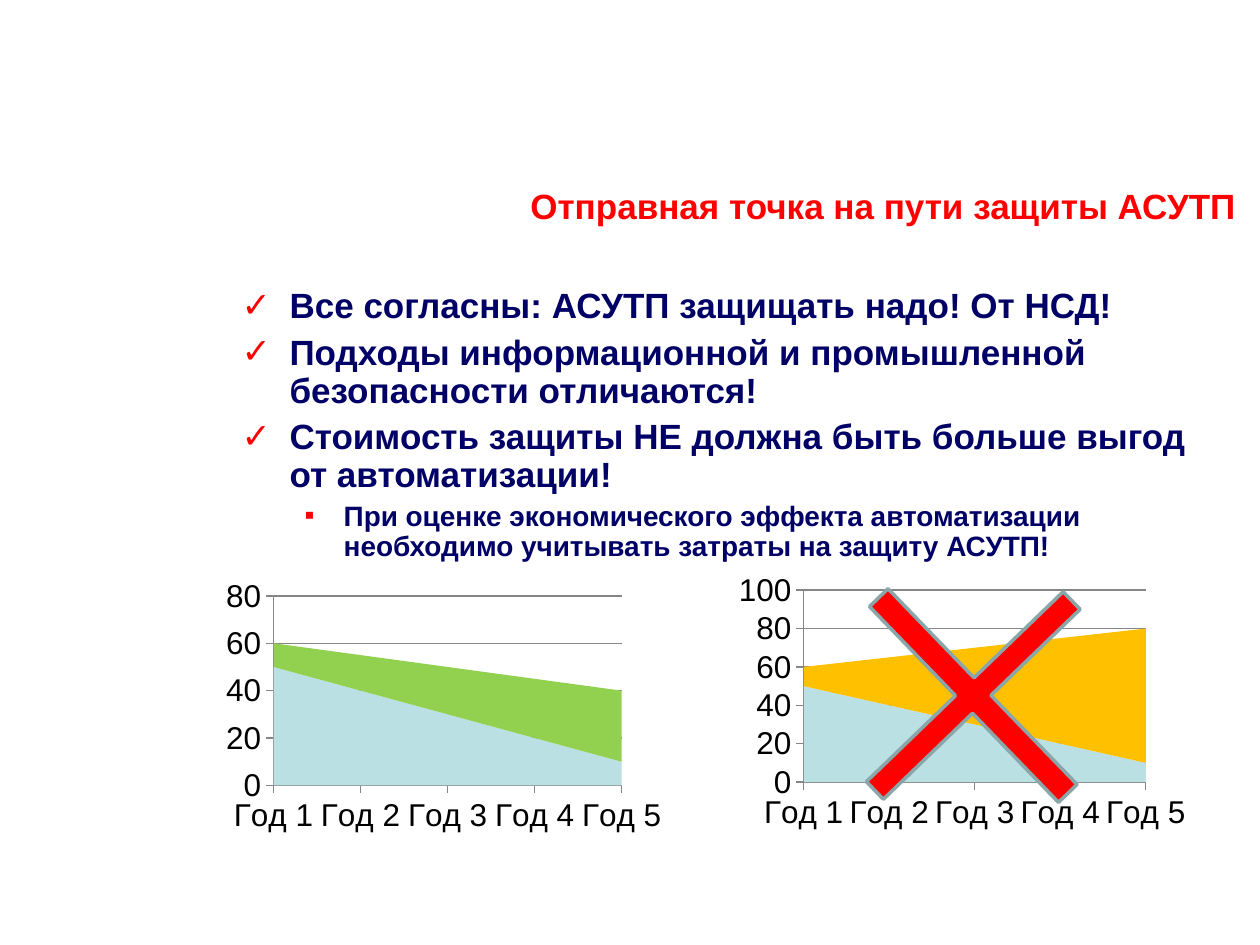
from lxml.etree import SubElement
from pptx import Presentation
from pptx.chart.data import CategoryChartData
from pptx.dml.color import RGBColor
from pptx.enum.chart import XL_CHART_TYPE, XL_TICK_MARK
from pptx.enum.shapes import MSO_SHAPE
from pptx.enum.text import MSO_ANCHOR, PP_ALIGN
from pptx.oxml.ns import qn
from pptx.util import Inches, Pt

RED, NAVY, BLACK, GRAY = "FF0000", "000066", "000000", "868686"
FONT = "Arial"

HEADING = "Отправная точка на пути защиты АСУТП"
MAIN = {"mark": "✓", "size": 20, "indent": 0.38, "hang": 0.38}
SUB = {"mark": "▪", "size": 16, "indent": 0.81, "hang": 0.31}
POINTS = [
    (MAIN, "Все согласны: АСУТП защищать надо! От НСД!"),
    (MAIN, "Подходы информационной и промышленной безопасности отличаются!"),
    (MAIN, "Стоимость защиты НЕ должна быть больше выгод от автоматизации!"),
    (SUB, "При оценке экономического эффекта автоматизации "
          "необходимо учитывать затраты на защиту АСУТП!"),
]
YEARS = [f"Год {number}" for number in range(1, 6)]
BENEFIT = ("Series 1", [50, 40, 30, 20, 10], "BBE0E3")
SCENARIOS = [
    {"box": (1.74, 4.56, 3.59, 2.12), "plot": (0.12, 0.08, 0.77, 0.71), "top": 80,
     "series": [BENEFIT, ("Series 2", [10, 15, 20, 25, 30], "92D050")]},
    {"box": (5.8, 4.49, 3.62, 2.42), "plot": (0.16, 0.08, 0.75, 0.63), "top": 100,
     "series": [BENEFIT, ("Series 2", [10, 25, 40, 55, 70], "FFC000")]},
]


def color(hex_code):
    return RGBColor.from_string(hex_code)


def inches(box):
    return [Inches(length) for length in box]


def apply(target, formats):
    for key, value in formats.items():
        setattr(target, key, value)


def style_font(font, size, hex_code, bold=False):
    apply(font, {"name": FONT, "size": Pt(size), "bold": bold})
    font.color.rgb = color(hex_code)


def add_heading(slide):
    heading = slide.shapes.title
    apply(heading, dict(zip(("left", "top", "width", "height"),
                            inches((1.25, 1.22, 8.66, 1.19)))))
    frame = heading.text_frame
    apply(frame, {"text": HEADING, "word_wrap": True, "margin_bottom": Inches(0.42),
                  "vertical_anchor": MSO_ANCHOR.MIDDLE})
    line = frame.paragraphs[0]
    line.alignment = PP_ALIGN.RIGHT
    style_font(line.runs[0].font, 20, RED, True)


def add_bullet(paragraph, level):
    props = paragraph._p.get_or_add_pPr()
    props.set("marL", str(Inches(level["indent"])))
    props.set("indent", str(-Inches(level["hang"])))
    tint = SubElement(props, qn("a:buClr"))
    SubElement(tint, qn("a:srgbClr"), val=RED)
    SubElement(props, qn("a:buFont"), typeface=FONT)
    SubElement(props, qn("a:buChar"), char=level["mark"])


def add_points(slide):
    frame = slide.shapes.add_textbox(*inches((1.82, 2.24, 7.96, 4.33))).text_frame
    frame.word_wrap = True
    for index, (level, text) in enumerate(POINTS):
        point = frame.add_paragraph() if index else frame.paragraphs[0]
        add_bullet(point, level)
        point.line_spacing = 0.9
        if index:
            point.space_before = Pt(level["size"] / 4)
        run = point.add_run()
        run.text = text
        style_font(run.font, level["size"], NAVY, True)


def place_plot(chart, fractions):
    plot_area = chart._chartSpace.chart.plotArea
    layout = plot_area.find(qn("c:layout"))
    if layout is None:
        layout = SubElement(plot_area, qn("c:layout"))
        plot_area.insert(0, layout)
    manual = SubElement(layout, qn("c:manualLayout"))
    settings = [("layoutTarget", "inner"), ("xMode", "edge"), ("yMode", "edge")]
    settings += zip("xywh", map(str, fractions))
    for tag, value in settings:
        SubElement(manual, qn(f"c:{tag}"), val=value)


def add_scenario(slide, scenario):
    data = CategoryChartData()
    data.categories = YEARS
    for name, values, _ in scenario["series"]:
        data.add_series(name, values)
    chart = slide.shapes.add_chart(XL_CHART_TYPE.AREA_STACKED,
                                   *inches(scenario["box"]), data).chart
    apply(chart, {"has_legend": False, "has_title": False})
    style_font(chart.font, 18, BLACK)
    place_plot(chart, scenario["plot"])
    for area, (_, _, hex_code) in zip(chart.plots[0].series, scenario["series"]):
        area.format.fill.solid()
        area.format.fill.fore_color.rgb = color(hex_code)
    years, amounts = chart.category_axis, chart.value_axis
    apply(years, {"has_major_gridlines": False})
    apply(amounts, {"has_major_gridlines": True, "minimum_scale": 0,
                    "maximum_scale": scenario["top"], "major_unit": 20})
    for axis in (years, amounts):
        apply(axis, {"major_tick_mark": XL_TICK_MARK.OUTSIDE,
                     "minor_tick_mark": XL_TICK_MARK.NONE})
    for lined in (years, amounts, amounts.major_gridlines):
        lined.format.line.color.rgb = color(GRAY)
        lined.format.line.width = Pt(0.75)
    amounts._element.find(qn("c:crossBetween")).set("val", "midCat")


def add_cross(slide):
    cross = slide.shapes.add_shape(MSO_SHAPE.CROSS, *inches((6.64, 4.44, 2.17, 2.16)))
    cross.adjustments[0] = 0.455
    cross.rotation = 316
    cross.shadow.inherit = False
    cross.fill.solid()
    cross.fill.fore_color.rgb = color(RED)
    cross.line.color.rgb = color("8AA6A8")
    cross.line.width = Pt(2)


def main():
    deck = Presentation()
    apply(deck, {"slide_width": Inches(10), "slide_height": Inches(7.5)})
    slide = deck.slides.add_slide(deck.slide_layouts[5])
    add_heading(slide)
    add_points(slide)
    for scenario in SCENARIOS:
        add_scenario(slide, scenario)
    add_cross(slide)
    deck.save("out.pptx")


if __name__ == "__main__":
    main()
